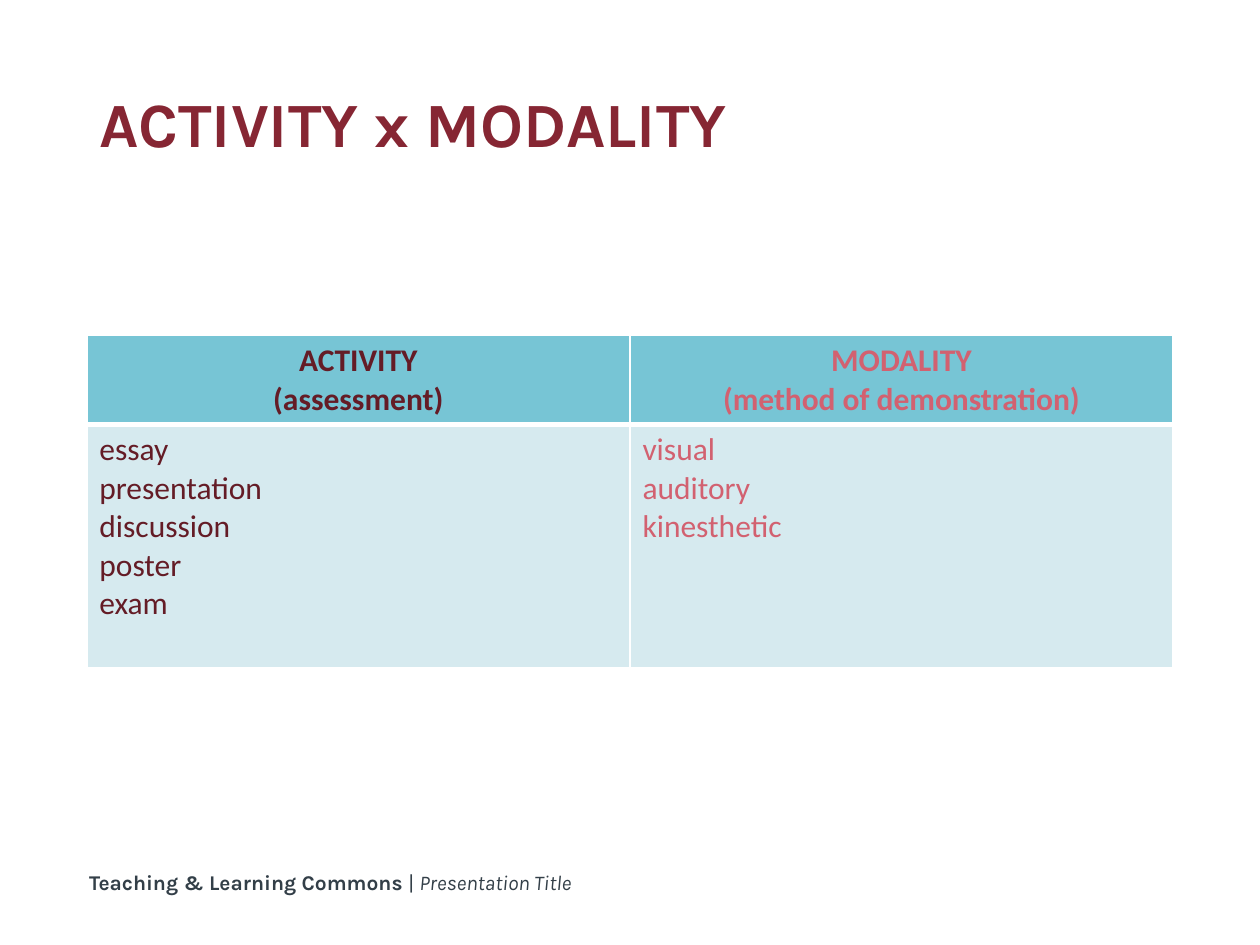
from dataclasses import dataclass

from lxml import etree
from pptx import Presentation
from pptx.dml.color import RGBColor
from pptx.enum.text import MSO_ANCHOR, PP_ALIGN
from pptx.oxml.ns import qn
from pptx.slide import Slide
from pptx.util import Cm, Pt

CENTER, LEFT = PP_ALIGN.CENTER, PP_ALIGN.LEFT
MIDDLE, TOP = MSO_ANCHOR.MIDDLE, MSO_ANCHOR.TOP

MAROON = RGBColor(0x86, 0x26, 0x33)
DARK_MAROON = RGBColor(0x64, 0x1C, 0x26)
ROSE = RGBColor(0xD2, 0x61, 0x70)
SLATE = RGBColor(0x33, 0x3F, 0x48)
TEAL = RGBColor(0x77, 0xC5, 0xD5)
PALE_TEAL = RGBColor(0xD6, 0xEA, 0xEF)
WHITE = RGBColor(0xFF, 0xFF, 0xFF)


@dataclass
class Deck:
    """Holds the style and the current slide, and adds each kind of element."""

    slide: Slide
    heading_font: str = "Karla"
    table_font: str = "Calibri"
    table_size: int = 18

    def style(self, paragraph, name, size, color, bold=None):
        font = paragraph.font
        font.name, font.size, font.bold = name, Pt(size), bold
        font.color.rgb = color

    def text(self, left, top, width, height, runs, size, color, anchor=TOP, spacing=1.0):
        box = self.slide.shapes.add_textbox(Cm(left), Cm(top), Cm(width), Cm(height))
        frame = box.text_frame
        frame.word_wrap, frame.vertical_anchor = True, anchor
        line = frame.paragraphs[0]
        line.line_spacing = spacing
        for words, bold, italic in runs:
            run = line.add_run()
            run.text = words
            run.font.bold, run.font.italic = bold, italic
        self.style(line, self.heading_font, size, color)

    def borders(self, cell, widths):
        properties = cell._tc.get_or_add_tcPr()
        for side, width in widths.items():
            border = etree.SubElement(properties, qn(f"a:ln{side}"), w=str(Pt(width)))
            fill = etree.SubElement(border, qn("a:solidFill"))
            etree.SubElement(fill, qn("a:srgbClr"), val=str(WHITE))

    def cell(self, cell, lines, color, fill, header):
        self.borders(cell, {"L": 1, "R": 1, "T": 1 if header else 3, "B": 3 if header else 1})
        cell.fill.solid()
        cell.fill.fore_color.rgb = fill
        cell.text = "\n".join(lines)
        for paragraph in cell.text_frame.paragraphs:
            paragraph.alignment = CENTER if header else LEFT
            self.style(paragraph, self.table_font, self.table_size, color, header)

    def table(self, left, top, width, row_heights, columns):
        frame = self.slide.shapes.add_table(
            len(row_heights), len(columns), Cm(left), Cm(top), Cm(width), Cm(sum(row_heights))
        )
        table = frame.table
        for row, height in zip(table.rows, row_heights):
            row.height = Cm(height)
        for index, (heading, items, color) in enumerate(columns):
            self.cell(table.cell(0, index), heading, color, TEAL, True)
            self.cell(table.cell(1, index), items, color, PALE_TEAL, False)


def main():
    presentation = Presentation()
    presentation.slide_width, presentation.slide_height = Cm(25.4), Cm(19.05)
    deck = Deck(presentation.slides.add_slide(presentation.slide_layouts[6]))

    footer = [
        ("Teaching & Learning Commons ", True, False),
        ("| ", False, False),
        ("Presentation Title", False, True),
    ]
    deck.text(1.55, 17.4, 14.76, 0.76, footer, 12, SLATE)

    title = [("ACTIVITY x MODALITY", True, False)]
    deck.text(1.75, 1.68, 21.9, 1.75, title, 36, MAROON, MIDDLE, 0.9)

    activities = ["essay", "presentation", "discussion", "poster", "exam"]
    modalities = ["visual", "auditory", "kinesthetic"]
    columns = [
        (["ACTIVITY", "(assessment)"], activities, DARK_MAROON),
        (["MODALITY", "(method of demonstration)"], modalities, ROSE),
    ]
    deck.table(1.75, 6.76, 21.9, [1.8, 4.9], columns)

    presentation.save("out.pptx")


if __name__ == "__main__":
    main()
